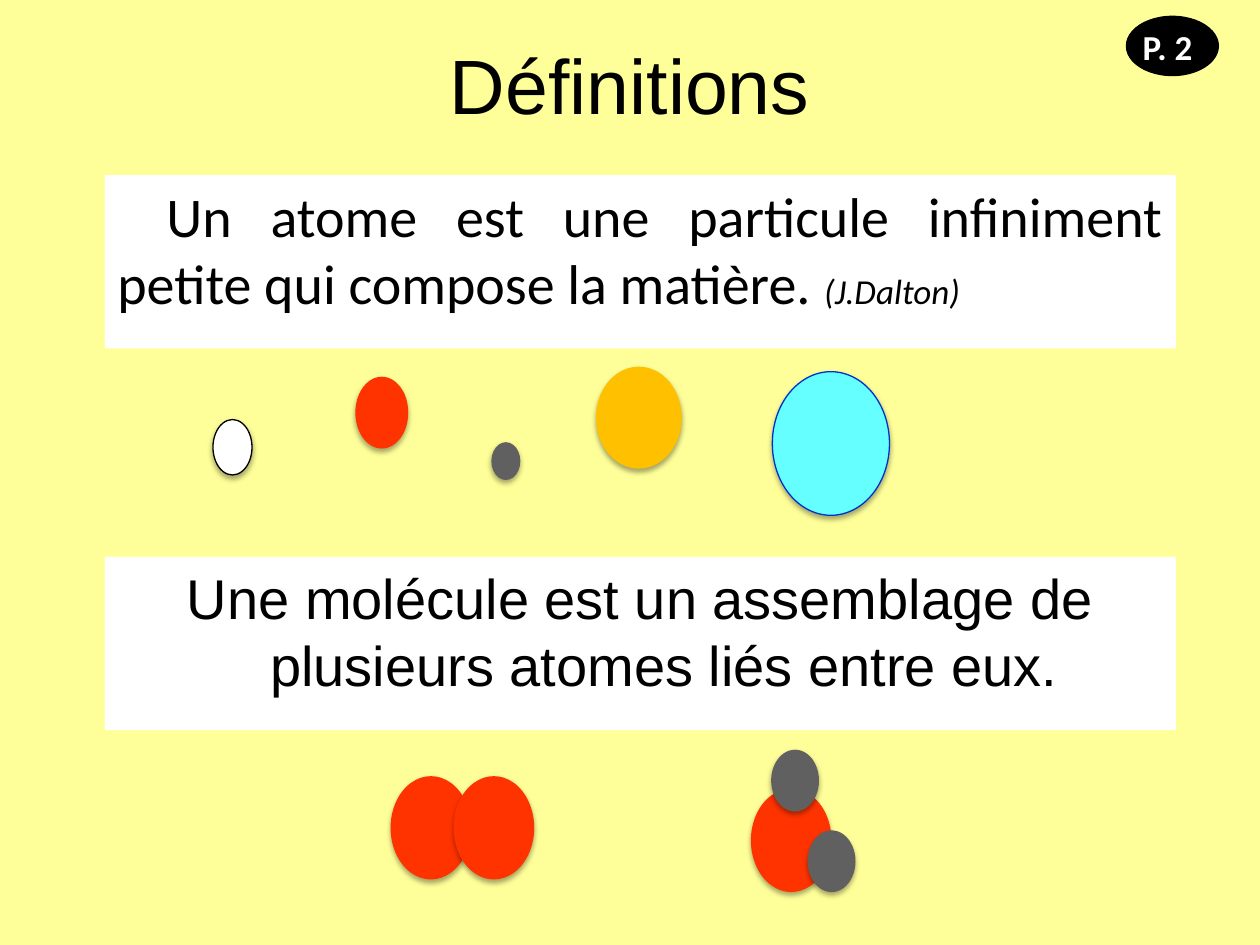
from lxml import etree
from pptx import Presentation
from pptx import util as u
from pptx.dml.color import RGBColor
from pptx.enum import shapes, text
from pptx.oxml import ns

COLORS = {
    "background": "FFFF99", "white": "FFFFFF", "black": "000000",
    "red": "FF3300", "grey": "606060", "orange": "FFC000",
    "cyan": "66FFFF", "blue": "0033CC",
}

presentation = Presentation()
presentation.slide_width = u.Inches(10)
presentation.slide_height = u.Inches(7.5)
slide = presentation.slides.add_slide(presentation.slide_layouts[6])
slide.background.fill.solid()
slide.background.fill.fore_color.rgb = RGBColor.from_string(COLORS["background"])

# Grid of 100 columns by 75 rows
COLUMN = presentation.slide_width / 100
ROW = presentation.slide_height / 75


def add_figure(kind, place, fill, line=None, shadow=False):
    left, top, width, height = place
    shape = slide.shapes.add_shape(kind, int(left * COLUMN), int(top * ROW),
                                   int(width * COLUMN), int(height * ROW))
    shape.shadow.inherit = False
    shape.fill.solid()
    shape.fill.fore_color.rgb = RGBColor.from_string(COLORS[fill])
    if line:
        shape.line.color.rgb = RGBColor.from_string(COLORS[line])
        shape.line.width = u.Pt(0.75)
    else:
        shape.line.fill.background()
    if shadow:
        effects = shape._element.spPr.find(ns.qn("a:effectLst"))
        outer = etree.SubElement(effects, ns.qn("a:outerShdw"), blurRad=str(u.Pt(3.1)),
                                 dist=str(u.Pt(1.8)), dir="5400000", rotWithShape="0")
        color = etree.SubElement(outer, ns.qn("a:srgbClr"), val=COLORS["black"])
        etree.SubElement(color, ns.qn("a:alpha"), val="35000")
    return shape


def write(shape, words, size, font="Arial", color="black", bold=False, italic=False,
          align=text.PP_ALIGN.LEFT, anchor=text.MSO_ANCHOR.TOP, wrap=True,
          before=0, margin=0, indent=0):
    frame = shape.text_frame
    frame.word_wrap = wrap
    frame.vertical_anchor = anchor
    paragraph = frame.paragraphs[0]
    paragraph.alignment = align
    paragraph.space_before = u.Pt(before)
    properties = paragraph._p.get_or_add_pPr()
    properties.set("marL", str(u.Inches(margin)))
    properties.set("indent", str(u.Inches(indent)))
    run = paragraph.add_run()
    run.text = words
    run.font.size = u.Pt(size)
    run.font.name = font
    run.font.bold = bold
    run.font.italic = italic
    run.font.color.rgb = RGBColor.from_string(COLORS[color])


# Title
title = slide.shapes.add_textbox(int(3.33 * COLUMN), int(2.5 * ROW),
                                 int(93.33 * COLUMN), int(8.33 * ROW))
write(title, "Définitions", 44, align=text.PP_ALIGN.CENTER, anchor=text.MSO_ANCHOR.MIDDLE)

# Definition panels
atom_panel, molecule_panel = [
    add_figure(shapes.MSO_SHAPE.RECTANGLE, (8.33, top, 85, 13.75), "white")
    for top in (13.9, 44.2)]
atom_format = dict(font="Calibri", align=text.PP_ALIGN.JUSTIFY, before=6.4, indent=0.39)
write(atom_panel, "Un atome est une particule infiniment petite qui compose la matière. ",
      32, **atom_format)
write(atom_panel, "(J.Dalton)", 20, italic=True, **atom_format)
write(molecule_panel, "Une molécule est un assemblage de plusieurs atomes liés entre eux.",
      32, align=text.PP_ALIGN.CENTER, before=6.4, margin=0.38, indent=-0.38)

# Page badge
add_figure(shapes.MSO_SHAPE.OVAL, (89.4, 1.3, 7.3, 4.7), "black", line="black")
page_label = slide.shapes.add_textbox(int(89.7 * COLUMN), int(1.5 * ROW),
                                      int(6 * COLUMN), int(4.4 * ROW))
write(page_label, "P. 2", 20, font="Calibri", color="white", bold=True, wrap=False)
page_label.text_frame.auto_size = text.MSO_AUTO_SIZE.SHAPE_TO_FIT_TEXT

# Single atoms, then the two molecules: left, top, width, height, fill, line
atoms = [
    (16.9, 33.3, 3.1, 4.4, "white", "black"),
    (28.2, 29.9, 4.2, 5.7, "red", None),
    (39, 35.1, 2.3, 3, "grey", None),
    (47.3, 29.1, 6.8, 8.1, "orange", None),
    (61.3, 29.5, 9.3, 11.4, "cyan", "blue"),
]
large, small = (6.4, 8.2), (3.8, 4.9)
molecules = [
    (31, 61.6, *large, "red", None),
    (36, 61.6, *large, "red", None),
    (59.6, 62.6, *large, "red", None),
    (61.2, 59.5, *small, "grey", None),
    (64.1, 65.9, *small, "grey", None),
]
for *place, fill, line in atoms + molecules:
    add_figure(shapes.MSO_SHAPE.OVAL, place, fill, line, shadow=True)

presentation.save("out.pptx")
